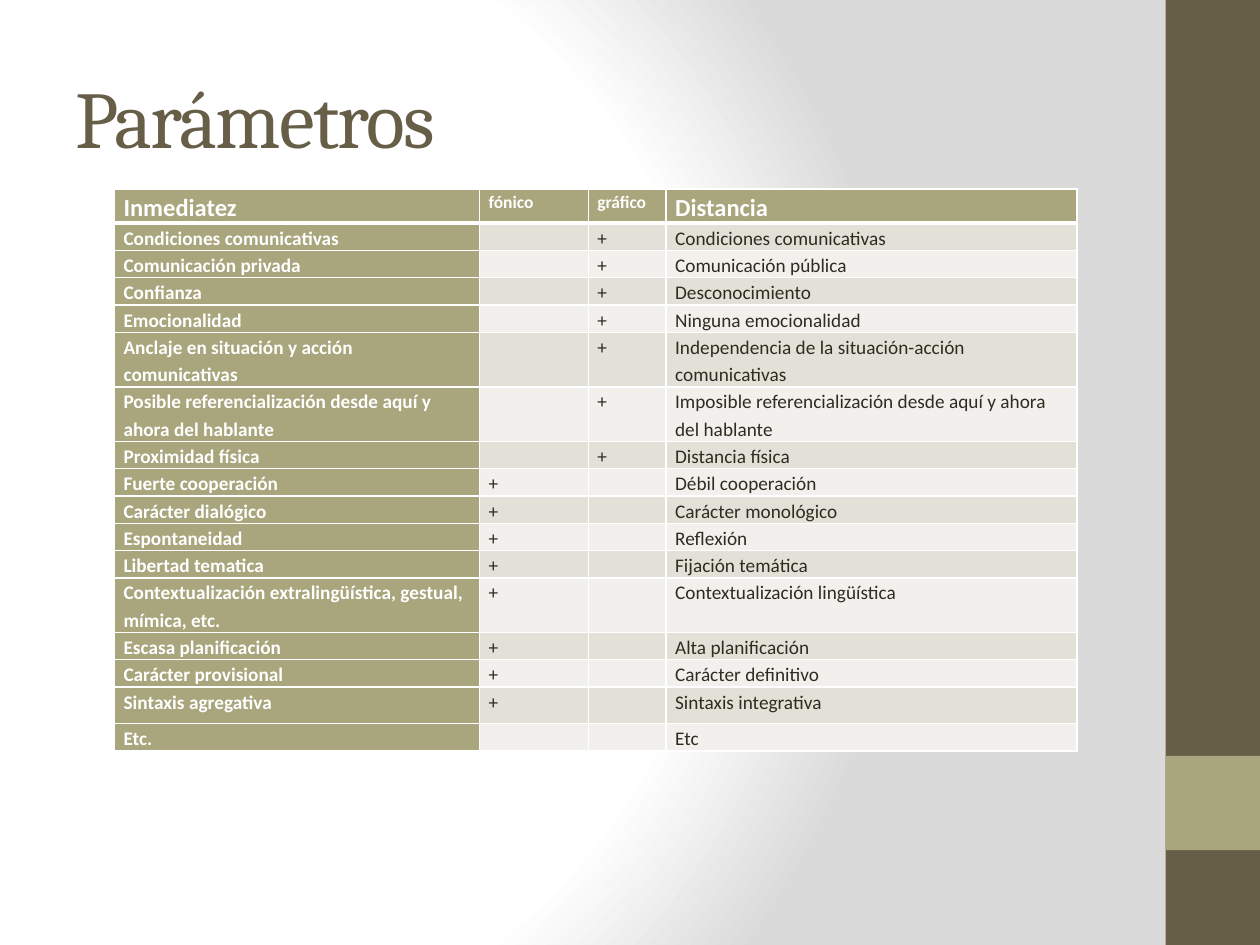
from lxml import etree
from pptx import Presentation
from pptx.dml.color import RGBColor
from pptx.enum.shapes import MSO_SHAPE as Shape
from pptx.enum.text import MSO_ANCHOR as Anchor
from pptx.oxml import parse_xml
from pptx.oxml.ns import nsdecls, qn
from pptx.util import Cm, Pt

BROWN, OLIVE, WHITE, INK = "675E47", "A9A57C", "FFFFFF", "2F2B20"
BANDS = "E2E1D7", "F1F0EC"
LINE, TALL, HEAD = 0.55, 0.74, 0.69

HEADS = [("Inmediatez", 14), ("fónico", 10), ("gráfico", 10), ("Distancia", 14)]
# near term, column of the plus sign (0 for none), far term, row height
ROWS = [
    ("Condiciones comunicativas", 2, "Condiciones comunicativas", LINE),
    ("Comunicación privada", 2, "Comunicación pública", LINE),
    ("Confianza", 2, "Desconocimiento", LINE),
    ("Emocionalidad", 2, "Ninguna emocionalidad", LINE),
    ("Anclaje en situación y acción comunicativas", 2,
     "Independencia de la situación-acción comunicativas", 2 * LINE),
    ("Posible referencialización desde aquí y ahora del hablante", 2,
     "Imposible referencialización desde aquí y ahora del hablante", 2 * LINE),
    ("Proximidad física", 2, "Distancia física", LINE),
    ("Fuerte cooperación", 1, "Débil cooperación", LINE),
    ("Carácter dialógico", 1, "Carácter monológico", LINE),
    ("Espontaneidad", 1, "Reflexión", LINE),
    ("Libertad tematica", 1, "Fijación temática", LINE),
    ("Contextualización extralingüística, gestual, mímica, etc.", 1,
     "Contextualización lingüística", 2 * LINE),
    ("Escasa planificación", 1, "Alta planificación", LINE),
    ("Carácter provisional", 1, "Carácter definitivo", LINE),
    ("Sintaxis agregativa", 1, "Sintaxis integrativa", TALL),
    ("Etc.", 0, "Etc", LINE),
]


def rgb(code):
    return RGBColor.from_string(code)


def write(frame, text, font="Calibri", size=11, color=INK, bold=False,
          space=1.0, track=0):
    """Put one formatted paragraph in a text frame."""
    para = frame.paragraphs[0]
    para.line_spacing = space
    if not text:
        # an empty cell still needs its size, or its row grows
        etree.SubElement(para._p, qn("a:endParaRPr"), sz=str(size * 100))
        return
    run = para.add_run()
    run.text = text
    run.font.name, run.font.size, run.font.bold = font, Pt(size), bold
    run.font.color.rgb = rgb(color)
    if track:
        run._r.get_or_add_rPr().set("spc", str(track * 100))


def paint(slide):
    """Fill the background with a radial gradient."""
    stops = "".join(
        f'<a:gs pos="{pos * 1000}"><a:srgbClr val="{code}"/></a:gs>'
        for pos, code in ((0, WHITE), (75, WHITE), (100, "DADADA")))
    grad = parse_xml(
        f'<a:gradFill {nsdecls("a")} rotWithShape="1"><a:gsLst>{stops}</a:gsLst>'
        '<a:path path="circle"><a:fillToRect l="20000" t="50000" '
        'r="100000" b="50000"/></a:path></a:gradFill>')
    slide.background.fill.gradient()
    old = next(slide._element.iter(qn("a:gradFill")))
    old.getparent().replace(old, grad)


def block(slide, left, top, width, height, color):
    box = slide.shapes.add_shape(
        Shape.RECTANGLE, Cm(left), Cm(top), Cm(width), Cm(height))
    box.shadow.inherit = False
    box.fill.solid()
    box.fill.fore_color.rgb = rgb(color)
    box.line.fill.background()


def title(slide, text):
    box = slide.shapes.add_textbox(Cm(1.27), Cm(0.76), Cm(21.16), Cm(3.18))
    box.text_frame.word_wrap = True
    box.text_frame.vertical_anchor = Anchor.MIDDLE
    write(box.text_frame, text, font="Cambria", size=46, color=BROWN, track=-1)


def edge(cell, side, width):
    line = etree.SubElement(cell._tc.get_or_add_tcPr(), qn(f"a:ln{side}"),
                            w=str(Pt(width)))
    fill = etree.SubElement(line, qn("a:solidFill"))
    etree.SubElement(fill, qn("a:srgbClr"), val=WHITE)


def put(cell, text, fill, top=1, base=1, **style):
    """Border, fill and write one cell."""
    for side, width in zip("LRTB", (1, 1, top, base)):
        edge(cell, side, width)
    cell.fill.solid()
    cell.fill.fore_color.rgb = rgb(fill)
    cell.margin_left = cell.margin_right = Cm(0.18)
    cell.margin_top = cell.margin_bottom = 0
    write(cell.text_frame, text, space=1.15, **style)


def grid(slide):
    highs = [HEAD] + [row[-1] for row in ROWS]
    wides = 7.36, 2.19, 1.57, 8.28
    table = slide.shapes.add_table(
        len(highs), len(wides), Cm(2.31), Cm(3.81),
        Cm(sum(wides)), Cm(sum(highs))).table
    for col, wide in zip(table.columns, wides):
        col.width = Cm(wide)
    for row, high in zip(table.rows, highs):
        row.height = Cm(high)

    for col, (text, size) in enumerate(HEADS):
        put(table.cell(0, col), text, OLIVE, base=3,
            size=size, color=WHITE, bold=True)
    for num, (near, plus, far, _) in enumerate(ROWS, 1):
        top = 3 if num == 1 else 1
        band = BANDS[(num - 1) % 2]
        put(table.cell(num, 0), near, OLIVE, top, color=WHITE, bold=True)
        for col in (1, 2):
            put(table.cell(num, col), "+" if col == plus else "", band, top)
        put(table.cell(num, 3), far, band, top)


def main():
    deck = Presentation()
    deck.slide_width, deck.slide_height = Cm(25.4), Cm(19.05)
    slide = deck.slides.add_slide(deck.slide_layouts[6])
    paint(slide)
    block(slide, 23.5, 0, 1.9, 19.05, BROWN)
    block(slide, 23.5, 15.24, 1.9, 1.9, OLIVE)
    title(slide, "Parámetros")
    grid(slide)
    deck.save("out.pptx")


if __name__ == "__main__":
    main()
